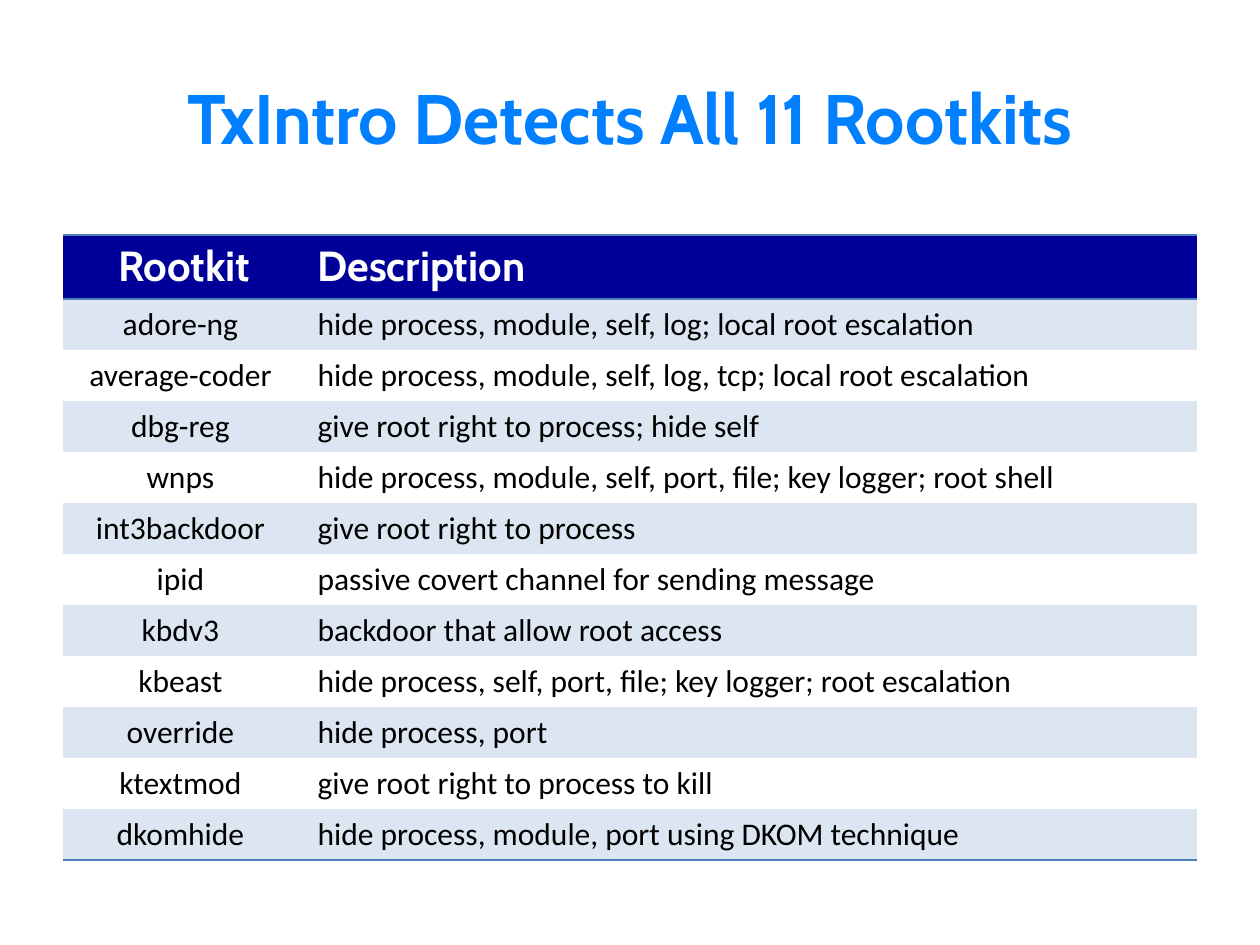
import pptx
import pptx.util
import pptx.dml.color
import pptx.enum.text
import pptx.oxml
import pptx.oxml.ns

TITLE = "TxIntro Detects All 11 Rootkits"
HEADER = ("Rootkit", "Description")
ROOTKITS = [
    ("adore-ng", "hide process, module, self, log; local root escalation"),
    ("average-coder", "hide process, module, self, log, tcp; local root escalation"),
    ("dbg-reg", "give root right to process; hide self"),
    ("wnps", "hide process, module, self, port, file; key logger; root shell"),
    ("int3backdoor", "give root right to process"),
    ("ipid", "passive covert channel for sending message"),
    ("kbdv3", "backdoor that allow root access"),
    ("kbeast", "hide process, self, port, file; key logger; root escalation"),
    ("override", "hide process, port"),
    ("ktextmod", "give root right to process to kill"),
    ("dkomhide", "hide process, module, port using DKOM technique"),
]

COLORS = {"title": "0080FF", "header": "000099", "band": "DCE6F2",
          "rule": "4F81BD", "light": "FFFFFF", "text": "000000"}
PLAIN_STYLE = "{2D5ABB26-0587-4C30-8999-92F81FD0307C}"
PX = 914400 // 126
LEFT, WIDTH = 63, 1134
TITLE_TOP, TITLE_H = 38, 157
TABLE_TOP, HEADER_H, ROW_H = 235, 64, 51
COLUMNS = (242, 892)
ALIGN = pptx.enum.text.PP_ALIGN


def px(*lengths):
    return [pptx.util.Emu(n * PX) for n in lengths]


def rgb(name):
    return pptx.dml.color.RGBColor.from_string(COLORS[name])


def write(tf, text, align, font, size, color, bold):
    p = tf.paragraphs[0]
    p.alignment = align
    r = p.add_run()
    r.text = text
    r.font.name = font
    r.font.size = pptx.util.Pt(size)
    r.font.bold = bold
    r.font.color.rgb = rgb(color)


def add_borders(cell, sides):
    """Draw 1 pt rules; border elements come before the fill."""
    tcPr = cell._tc.get_or_add_tcPr()
    for i, side in enumerate(sides):
        tcPr.insert(i, pptx.oxml.parse_xml(
            f'<a:ln{side} {pptx.oxml.ns.nsdecls("a")} w="12700"><a:solidFill>'
            f'<a:srgbClr val="{COLORS["rule"]}"/></a:solidFill></a:ln{side}>'))


prs = pptx.Presentation()
prs.slide_width, prs.slide_height = px(1260, 945)
s = prs.slides.add_slide(prs.slide_layouts[6])

# Title
tf = s.shapes.add_textbox(*px(LEFT, TITLE_TOP, WIDTH, TITLE_H)).text_frame
tf.word_wrap = True
tf.vertical_anchor = pptx.enum.text.MSO_ANCHOR.MIDDLE
write(tf, TITLE, ALIGN.CENTER, "Cabin", 40, "title", True)

# Table without the default style
rows = [HEADER] + ROOTKITS
heights = [HEADER_H] + [ROW_H] * len(ROOTKITS)
table = s.shapes.add_table(len(rows), len(COLUMNS),
                           *px(LEFT, TABLE_TOP, WIDTH, sum(heights))).table
table.horz_banding = False
table._tbl.tblPr.find(pptx.oxml.ns.qn("a:tableStyleId")).text = PLAIN_STYLE
for column, width in zip(table.columns, px(*COLUMNS)):
    column.width = width
for row, height in zip(table.rows, px(*heights)):
    row.height = height

# Cells: header, then bands on every other row
for i, row in enumerate(rows):
    for j, text in enumerate(row):
        cell = table.cell(i, j)
        align = ALIGN.LEFT if j else ALIGN.CENTER
        if i == 0:
            write(cell.text_frame, text, align, "Cabin", 24, "light", True)
        else:
            # Rootkit names carry a trailing space
            write(cell.text_frame, text if j else text + " ", align,
                  "Calibri", 18, "text", False)
        if i % 2 or i == 0:
            cell.fill.solid()
            cell.fill.fore_color.rgb = rgb("band" if i else "header")
        else:
            cell.fill.background()
        if i == 0:
            add_borders(cell, "TB")
        elif i == len(rows) - 1:
            add_borders(cell, "B")

prs.save("out.pptx")
